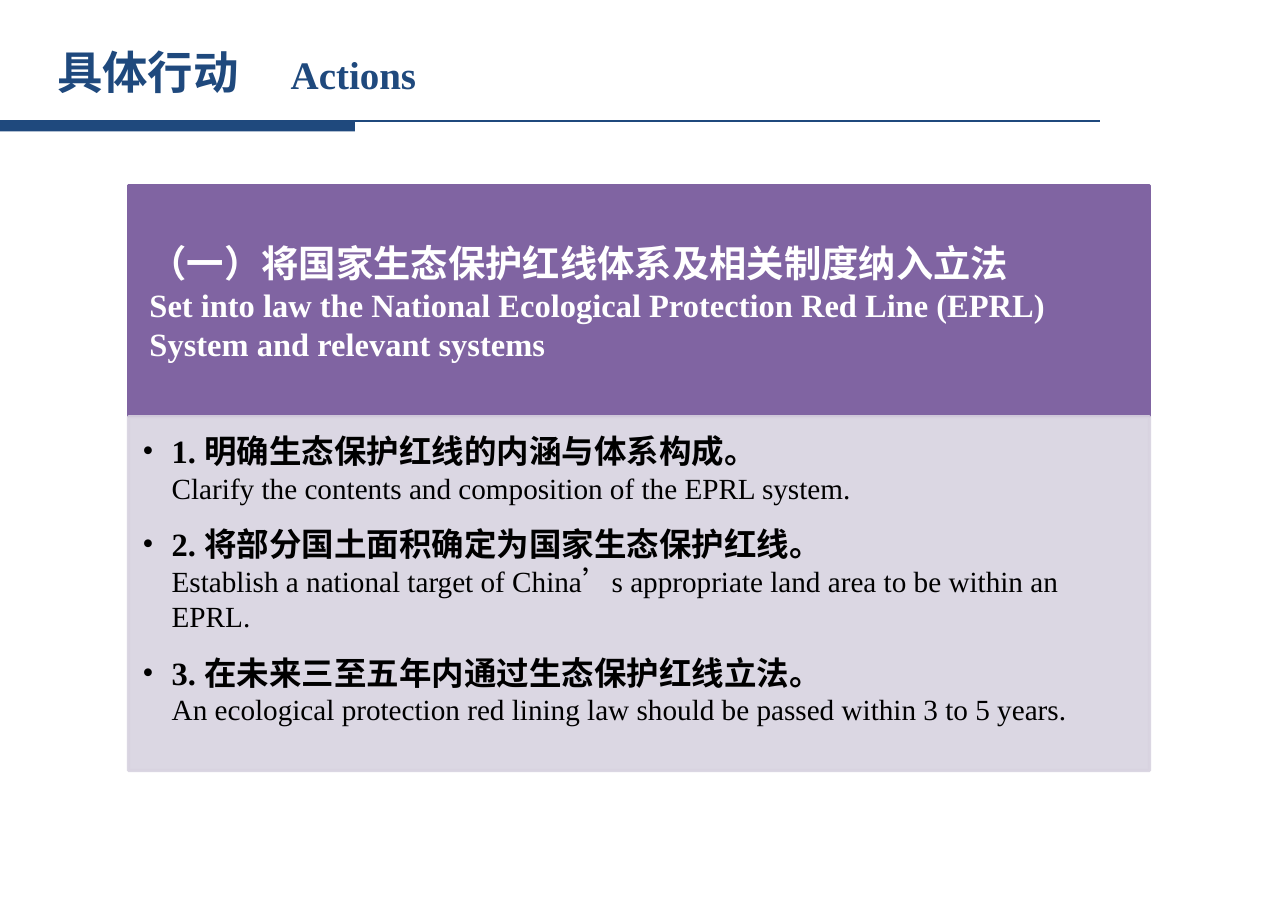
from lxml import etree
from pptx import Presentation
from pptx.dml.color import RGBColor
from pptx.enum.shapes import MSO_CONNECTOR, MSO_SHAPE
from pptx.enum.text import MSO_ANCHOR, PP_ALIGN
from pptx.oxml.ns import qn
from pptx.util import Pt

STRAIGHT = MSO_CONNECTOR.STRAIGHT
RECTANGLE = MSO_SHAPE.RECTANGLE
TOP, MIDDLE = MSO_ANCHOR.TOP, MSO_ANCHOR.MIDDLE
LEFT = PP_ALIGN.LEFT
SERIF, CJK = "Times New Roman", "Noto Sans CJK SC"
NAVY, PURPLE, LILAC = "1F497D", "8064A2", "D8D3E0"
WHITE, BLACK = "FFFFFF", "000000"


def rgb(value):
    return RGBColor.from_string(value)


def add_run(paragraph, text, size, color, bold=True, latin=SERIF):
    run = paragraph.add_run()
    run.text = text
    for key, value in {"size": Pt(size), "bold": bold, "name": latin}.items():
        setattr(run.font, key, value)
    run.font.color.rgb = rgb(color)
    etree.SubElement(run.font._element, qn("a:ea"), typeface=CJK)


deck = Presentation()
deck.slide_width, deck.slide_height = Pt(793.75), Pt(567)
slide = deck.slides.add_slide(deck.slide_layouts[6])
shapes = slide.shapes

header_rule = shapes.add_connector(STRAIGHT, Pt(0), Pt(74.7), Pt(678), Pt(74.7))
header_rule.line.color.rgb = rgb(NAVY)
header_rule.line.width = Pt(1.5)
etree.SubElement(header_rule._element.spPr, qn("a:effectLst"))

blocks = []
for left, top, width, height, color, outline in [
    (0, 75, 218.75, 6, NAVY, 0),
    (79.2, 114.4, 629.28, 142.5, PURPLE, 2),
    (79.2, 256.9, 629.28, 218, LILAC, 2),
]:
    block = shapes.add_shape(RECTANGLE, Pt(left), Pt(top), Pt(width), Pt(height))
    block.shadow.inherit = False
    block.fill.solid()
    block.fill.fore_color.rgb = rgb(color)
    if outline:
        block.line.color.rgb = rgb(color)
        block.line.width = Pt(outline)
    else:
        block.line.fill.background()
    blocks.append(block)
accent_bar, heading, actions = blocks

for tint in actions._element.spPr.iter(qn("a:srgbClr")):
    etree.SubElement(tint, qn("a:alpha"), val="90000")

title = shapes.add_textbox(Pt(28.08), Pt(22.7), Pt(662.4), Pt(46.8))
for part, anchor, margins in [
    (title, MIDDLE, (7.2, 3.6, 7.2, 3.6)),
    (heading, MIDDLE, (12.96, 7.2, 12.96, 7.2)),
    (actions, TOP, (8.64, 8.64, 11.52, 12.24)),
]:
    frame = part.text_frame
    frame.word_wrap = True
    frame.vertical_anchor = anchor
    for side, margin in zip(("left", "top", "right", "bottom"), margins):
        setattr(frame, f"margin_{side}", Pt(margin))

title_line = title.text_frame.paragraphs[0]
tabs = etree.SubElement(title_line._p.get_or_add_pPr(), qn("a:tabLst"))
etree.SubElement(tabs, qn("a:tab"), pos=str(Pt(144)), algn="l")
title_line.line_spacing = 0.9
add_run(title_line, "具体行动\t", 28, NAVY, latin=CJK)
add_run(title_line, "Actions", 24, NAVY)

heading_line = heading.text_frame.paragraphs[0]
heading_line.alignment = LEFT
add_run(heading_line, "（一）将国家生态保护红线体系及相关制度纳入立法", 23, WHITE)
heading_line.add_line_break()
add_run(heading_line, "Set into law the National Ecological Protection Red Line (EPRL) "
        "System and relevant systems", 20, WHITE)

for index, (chinese, english) in enumerate([
    ("1. 明确生态保护红线的内涵与体系构成。",
     ["Clarify the contents and composition of the EPRL system."]),
    ("2. 将部分国土面积确定为国家生态保护红线。",
     ["Establish a national target of China", "’",
      "s appropriate land area to be within an EPRL."]),
    ("3. 在未来三至五年内通过生态保护红线立法。",
     ["An ecological protection red lining law should be passed within 3 to 5 years."]),
]):
    frame = actions.text_frame
    action = frame.add_paragraph() if index else frame.paragraphs[0]
    layout = action._p.get_or_add_pPr()
    layout.set("marL", str(Pt(18)))
    layout.set("indent", str(Pt(-18)))
    etree.SubElement(layout, qn("a:buFont"), typeface=SERIF)
    etree.SubElement(layout, qn("a:buChar"), char="•")
    action.alignment = LEFT
    action.space_after = Pt(12)
    add_run(action, chinese, 20, BLACK)
    action.add_line_break()
    for piece in english:
        add_run(action, piece, 18, BLACK, False, CJK if piece == "’" else SERIF)

deck.save("out.pptx")
